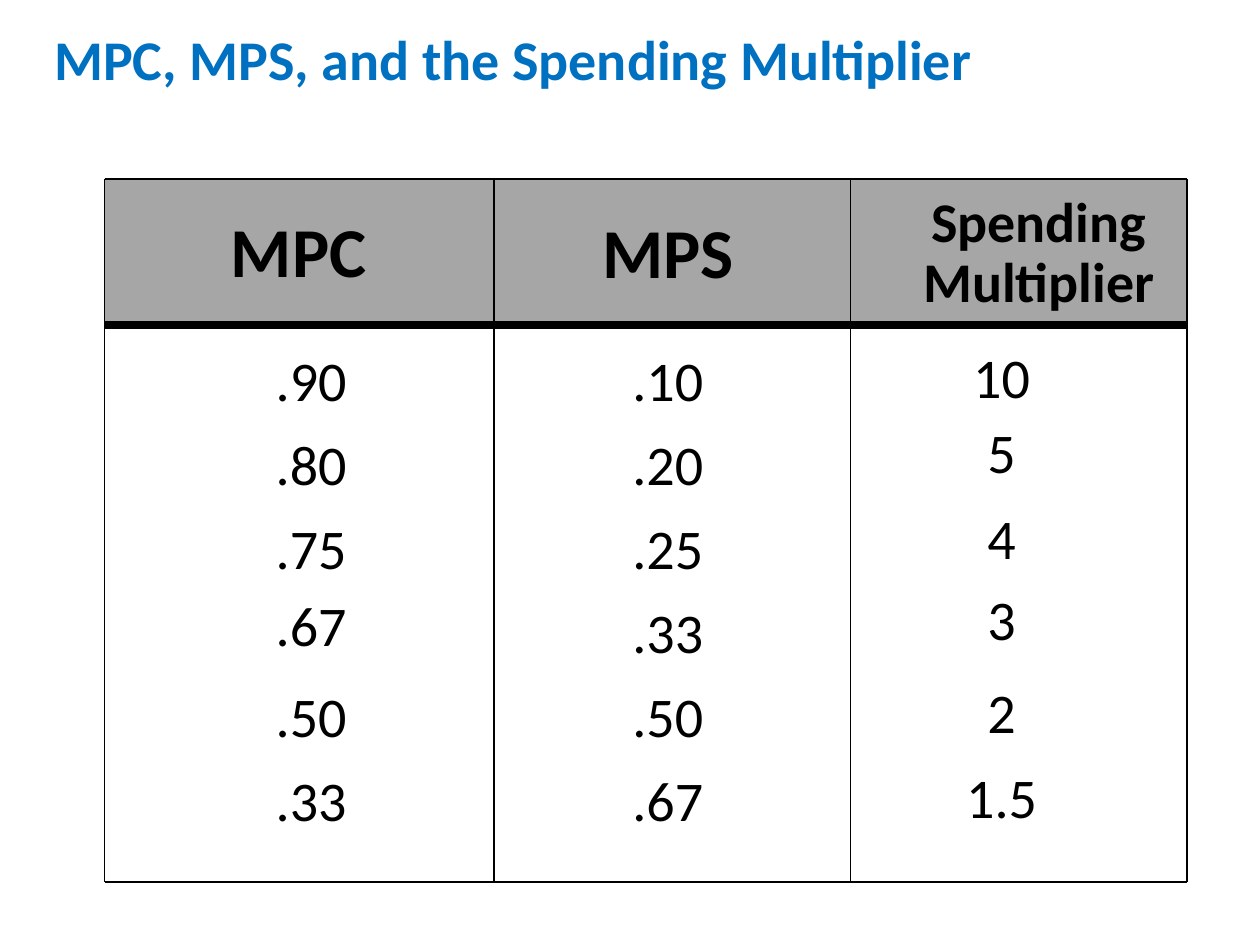
from dataclasses import dataclass

from lxml import etree
from pptx import Presentation
from pptx.dml.color import RGBColor
from pptx.enum.shapes import MSO_CONNECTOR, MSO_SHAPE
from pptx.enum.text import MSO_ANCHOR, MSO_AUTO_SIZE, PP_ALIGN
from pptx.oxml.ns import qn
from pptx.util import Inches, Pt

LEFT, CENTER, RIGHT = PP_ALIGN.LEFT, PP_ALIGN.CENTER, PP_ALIGN.RIGHT
TOP = MSO_ANCHOR.TOP
FIXED_SIZE = MSO_AUTO_SIZE.NONE
STRAIGHT = MSO_CONNECTOR.STRAIGHT
RECTANGLE = MSO_SHAPE.RECTANGLE
TITLE_ONLY = 5


@dataclass(frozen=True)
class Theme:
    """Colours, font and sizes of the slide."""
    font: str = "Calibri"
    title: RGBColor = RGBColor(0x00, 0x70, 0xC0)
    ink: RGBColor = RGBColor(0, 0, 0)
    header: RGBColor = RGBColor(0xA6, 0xA6, 0xA6)
    body_size: int = 32
    header_size: int = 40
    thin: float = 0.75
    thick: float = 4.5


@dataclass(frozen=True)
class Column:
    """A heading with its box, and the values below it."""
    heading: str
    heading_box: tuple
    heading_size: int
    left: float
    align: PP_ALIGN
    values: tuple
    shifts: tuple = (0, 0, 0, 0, 0, 0)


THEME = Theme()
COLUMN_EDGES = (0.83, 3.92, 6.75, 9.42)
TABLE_TOP, HEADER_BOTTOM, TABLE_BOTTOM = 1.42, 2.58, 7
FIRST_ROW, ROW_STEP = 2.75, 2 / 3
VALUE_WIDTH, VALUE_HEIGHT = 1, 0.59
COLUMNS = (
    Column("MPC", (1.58, 1.67, 1.58, 0.7), THEME.header_size, 1.85, RIGHT,
           (".90", ".80", ".75", ".67", ".50", ".33"), (0, 0, 0, -0.05, 0, 0)),
    Column("MPS", (4.51, 1.68, 1.58, 0.7), THEME.header_size, 4.92, LEFT,
           (".10", ".20", ".25", ".33", ".50", ".67")),
    Column("Spending Multiplier", (6.99, 1.49, 2.51, 1.07), THEME.body_size, 7.45, CENTER,
           ("10", "5", "4", "3", "2", "1.5"), (-0.02, -0.09, -0.08, -0.1, -0.03, -0.02)),
)


def write_text(box, text, *, size=THEME.body_size, color=THEME.ink, bold=False,
               align=LEFT, spacing=0.9):
    """Write one formatted paragraph into a box."""
    frame = box.text_frame
    frame.word_wrap = True
    frame.auto_size = FIXED_SIZE
    frame.vertical_anchor = TOP
    para = frame.paragraphs[0]
    para.alignment = align
    para.line_spacing = spacing
    span = para.add_run()
    span.text = text
    span.font.name = THEME.font
    span.font.size = Pt(size)
    span.font.bold = bold
    span.font.color.rgb = color


def add_text(page, text, place, **style):
    """Add a text box at left, top, width and height."""
    box = page.shapes.add_textbox(*map(Inches, place))
    write_text(box, text, **style)


def add_rule(page, start, end, width=THEME.thin):
    """Draw a straight rule between two points."""
    rule = page.shapes.add_connector(STRAIGHT, *map(Inches, start + end))
    rule.line.color.rgb = THEME.ink
    rule.line.width = Pt(width)
    etree.SubElement(rule._element.spPr, qn("a:effectLst"))


def add_title(page, text):
    """Place and format the title."""
    title = page.shapes.title
    title.left, title.top, title.width, title.height = map(Inches, (0.33, 0.25, 9.08, 0.54))
    write_text(title, text, color=THEME.title, bold=True, spacing=0.8)


def add_grid(page):
    """Draw the header band and the rules of the grid."""
    left, right = COLUMN_EDGES[0], COLUMN_EDGES[-1]
    band = page.shapes.add_shape(RECTANGLE, *map(Inches, (
        left, TABLE_TOP, right - left, HEADER_BOTTOM - TABLE_TOP)))
    band.shadow.inherit = False
    band.fill.solid()
    band.fill.fore_color.rgb = THEME.header
    band.line.fill.background()
    for height, width in ((HEADER_BOTTOM, THEME.thick), (TABLE_TOP, THEME.thin),
                          (TABLE_BOTTOM, THEME.thin)):
        add_rule(page, (left, height), (right, height), width)
    for edge in COLUMN_EDGES:
        add_rule(page, (edge, TABLE_TOP), (edge, TABLE_BOTTOM))


def add_column(page, column):
    """Write a heading and the values under it."""
    add_text(page, column.heading, column.heading_box, size=column.heading_size,
             bold=True, align=CENTER)
    for row, (value, shift) in enumerate(zip(column.values, column.shifts)):
        top = FIRST_ROW + row * ROW_STEP + shift
        add_text(page, value, (column.left, top, VALUE_WIDTH, VALUE_HEIGHT),
                 align=column.align)


def main():
    """Build the deck and save it."""
    deck = Presentation()
    deck.slide_width, deck.slide_height = Inches(10), Inches(7.5)
    page = deck.slides.add_slide(deck.slide_layouts[TITLE_ONLY])
    add_title(page, "MPC, MPS, and the Spending Multiplier")
    add_grid(page)
    for column in COLUMNS:
        add_column(page, column)
    deck.save("out.pptx")


if __name__ == "__main__":
    main()
